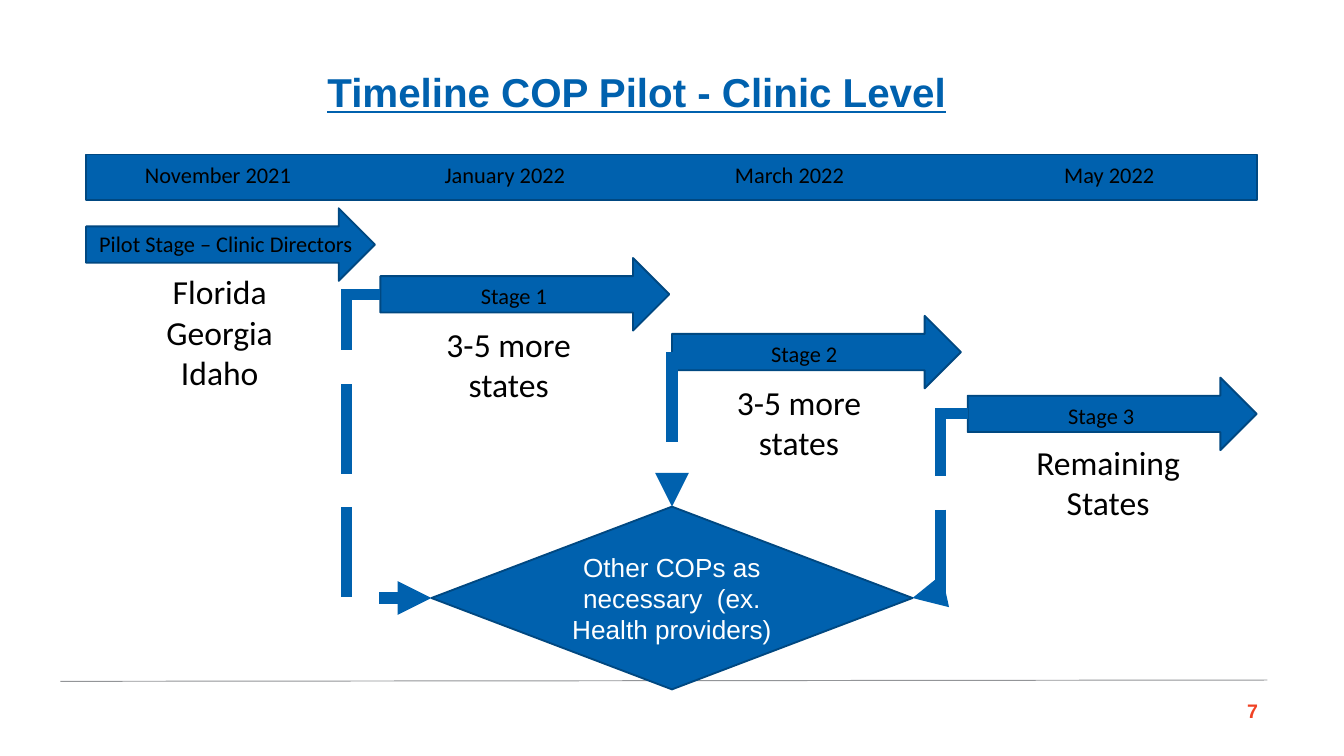
from lxml import etree
from pptx import Presentation
from pptx.dml.color import RGBColor
from pptx.enum import shapes, text
from pptx.oxml import ns
from pptx.util import Inches, Pt

BLUE = RGBColor(0x00, 0x61, 0xAE)
NAVY = RGBColor(0x00, 0x48, 0x81)
GREY = RGBColor(0x93, 0x95, 0x98)
RED = RGBColor(0xF0, 0x42, 0x24)
BLACK = RGBColor(0, 0, 0)
WHITE = RGBColor(0xFF, 0xFF, 0xFF)

ARROW_W, ARROW_H = 2.15, 0.54

# Arrow's left and top; label with its box; states with their box.
# Boxes are left and top within the arrow, and width.
STAGES = [
    (0.64, 1.55, "Pilot Stage – Clinic Directors", (0, 0.11, 2.5),
     ["Florida", "Georgia", "Idaho"], (0.42, 0.42, 1.15)),
    (2.83, 1.92, "Stage 1", (0.65, 0.13, 0.74), ["3-5 more states"], (0.38, 0.44, 1.15)),
    (5, 2.35, "Stage 2", (0.64, 0.13, 0.74), ["3-5 more states"], (0.37, 0.44, 1.15)),
    (7.2, 2.81, "Stage 3", (0.65, 0.13, 0.74), ["Remaining States"], (0.32, 0.43, 1.45)),
]
# Offset from the bar's left, width
MONTHS = [
    ("November 2021", 0.34, 1.47),
    ("January 2022", 2.57, 1.18),
    ("March 2022", 4.73, 1.18),
    ("May 2022", 7.18, 0.92),
]


def write(frame, lines, size, font="Calibri", color=BLACK, bold=False, underline=False,
          align=text.PP_ALIGN.LEFT, anchor=text.MSO_ANCHOR.TOP, spacing=None, wrap=True):
    frame.word_wrap = wrap
    frame.vertical_anchor = anchor
    for i, line in enumerate(lines):
        paragraph = frame.paragraphs[0] if i == 0 else frame.add_paragraph()
        paragraph.alignment = align
        if spacing:
            paragraph.line_spacing = Pt(spacing)
        run = paragraph.add_run()
        run.text = line
        run.font.name, run.font.size = font, Pt(size)
        run.font.bold, run.font.underline = bold, underline
        run.font.color.rgb = color


def add_text(slide, box, lines, size, **style):
    frame = slide.shapes.add_textbox(*map(Inches, box)).text_frame
    write(frame, lines, size, **style)
    return frame


def add_block(slide, preset, box):
    block = slide.shapes.add_shape(preset, *map(Inches, box))
    block.shadow.inherit = False
    block.fill.solid()
    block.fill.fore_color.rgb = BLUE
    block.line.color.rgb = NAVY
    block.line.width = Pt(1)
    return block


def add_line(slide, kind, start, end, color, width):
    line = slide.shapes.add_connector(kind, *map(Inches, (*start, *end)))
    line.line.color.rgb = color
    line.line.width = Pt(width)
    etree.SubElement(line._element.spPr, ns.qn("a:effectLst"))
    return line


def add_dashed_arrow(slide, start, end, bend=None):
    """Thick dashed arrow; bend is where an elbow turns, as a share of its width."""
    kind = shapes.MSO_CONNECTOR.STRAIGHT if bend is None else shapes.MSO_CONNECTOR.ELBOW
    arrow = add_line(slide, kind, start, end, BLUE, 6)
    outline = arrow.line._get_or_add_ln()
    for tag, value in (("prstDash", {"val": "lgDash"}), ("miter", {"lim": "800000"}),
                       ("tailEnd", {"type": "triangle"})):
        etree.SubElement(outline, ns.qn("a:" + tag), value)
    if bend is not None:
        guides = arrow._element.spPr.find(ns.qn("a:prstGeom")).get_or_add_avLst()
        etree.SubElement(guides, ns.qn("a:gd"), name="adj1", fmla=f"val {round(bend * 100000)}")
    return arrow


def add_month_bar(slide, left, top, width, height):
    add_block(slide, shapes.MSO_SHAPE.RECTANGLE, (left, top, width, height))
    for month, offset, month_width in MONTHS:
        add_text(slide, (left + offset, top, month_width, 0.3), [month], 12,
                 anchor=text.MSO_ANCHOR.MIDDLE)


def add_stage(slide, left, top, label, label_box, states, states_box):
    arrow = add_block(slide, shapes.MSO_SHAPE.RIGHT_ARROW, (left, top, ARROW_W, ARROW_H))
    dx, dy, width = label_box
    add_text(slide, (left + dx, top + dy, width, 0.3), [label], 12)
    dx, dy, width = states_box
    height = 1.01 if len(states) > 1 else 0.71
    add_text(slide, (left + dx, top + dy, width, height), states, 18,
             align=text.PP_ALIGN.CENTER)
    return arrow


def add_other_cops(slide, left, top, width, height, stage_arrows):
    """Diamond that each stage after the pilot feeds into."""
    diamond = add_block(slide, shapes.MSO_SHAPE.FLOWCHART_DECISION, (left, top, width, height))
    write(diamond.text_frame, ["Other COPs as necessary  (ex. Health providers)"], 14,
          font="Arial", color=WHITE, align=text.PP_ALIGN.CENTER, anchor=text.MSO_ANCHOR.MIDDLE)

    first, second, third = [(arrow.left.inches, arrow.top.inches + ARROW_H / 2)
                            for arrow in stage_arrows]
    middle = top + height / 2
    add_dashed_arrow(slide, first, (left, middle), bend=-0.66)
    down = add_dashed_arrow(slide, second, (left + width / 2, top))
    down.begin_connect(stage_arrows[1], 1)
    down.end_connect(diamond, 0)
    add_dashed_arrow(slide, third, (left + width, middle), bend=0.5)


def add_footer(slide, left, top, width):
    add_line(slide, shapes.MSO_CONNECTOR.STRAIGHT, (left, top), (left + width, top - 0.01),
             GREY, 0.5)
    number = add_text(slide, (left + 8.62, top + 0.1, 0.34, 0.21), ["7"], 10.5, font="Arial",
                      color=RED, bold=True, align=text.PP_ALIGN.CENTER, spacing=15, wrap=False)
    number.margin_left = number.margin_right = number.margin_top = number.margin_bottom = 0
    number.paragraphs[0]._p.get_or_add_pPr().set("indent", str(Inches(0.16)))


def main():
    deck = Presentation()
    deck.slide_width = Inches(10)
    deck.slide_height = deck.slide_width * 9 // 16
    slide = deck.slides.add_slide(deck.slide_layouts[6])

    add_footer(slide, 0.45, 5.07, 8.98)
    add_month_bar(slide, 0.64, 1.15, 8.71, 0.34)
    arrows = [add_stage(slide, *stage) for stage in STAGES]
    add_text(slide, (1.61, 0.45, 6.26, 0.46), ["Timeline COP Pilot - Clinic Level"], 21.6,
             font="Arial", color=BLUE, bold=True, underline=True, spacing=28.5,
             align=text.PP_ALIGN.CENTER, anchor=text.MSO_ANCHOR.BOTTOM)
    add_other_cops(slide, 3.21, 3.77, 3.58, 1.36, arrows[1:])

    deck.save("out.pptx")


if __name__ == "__main__":
    main()
